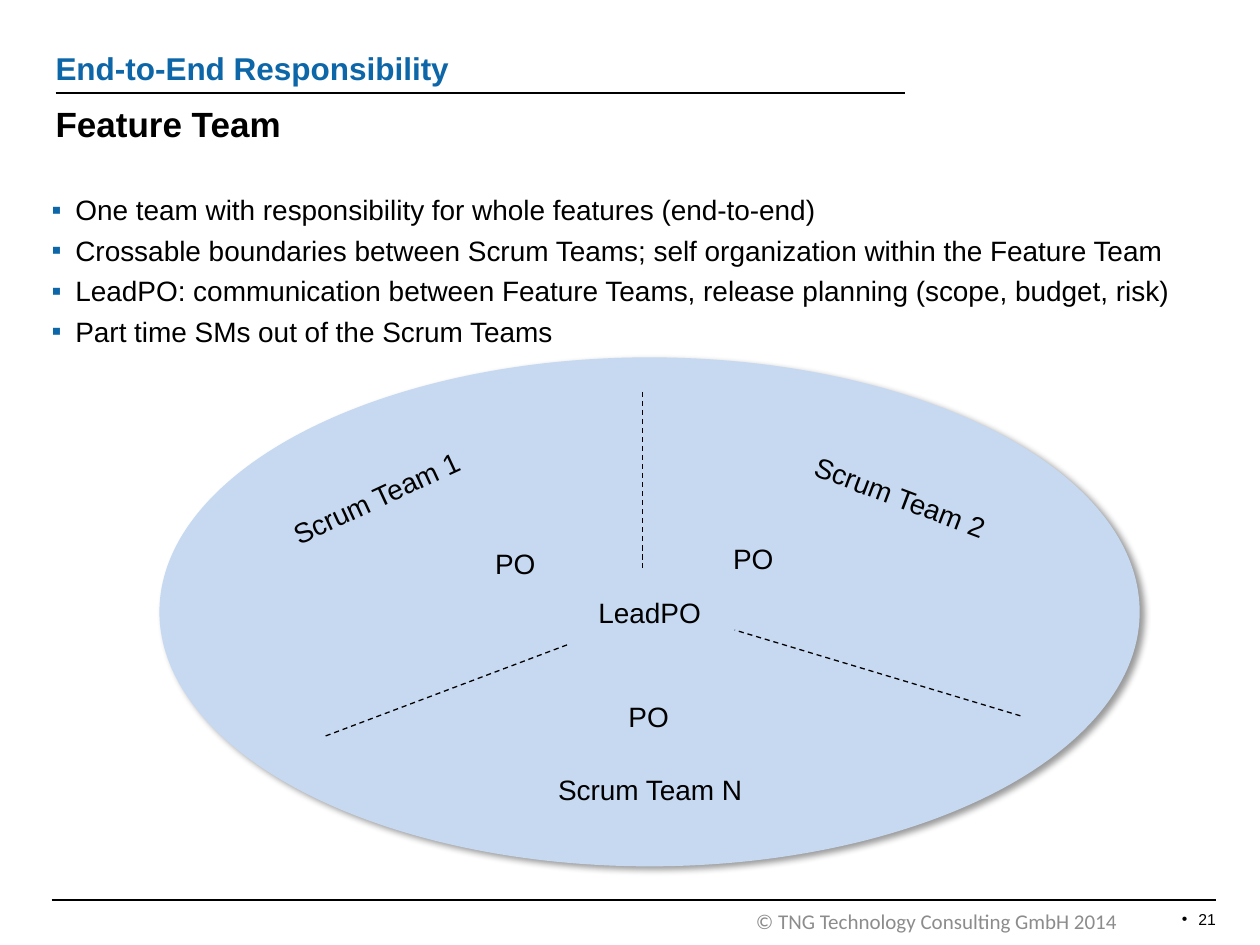
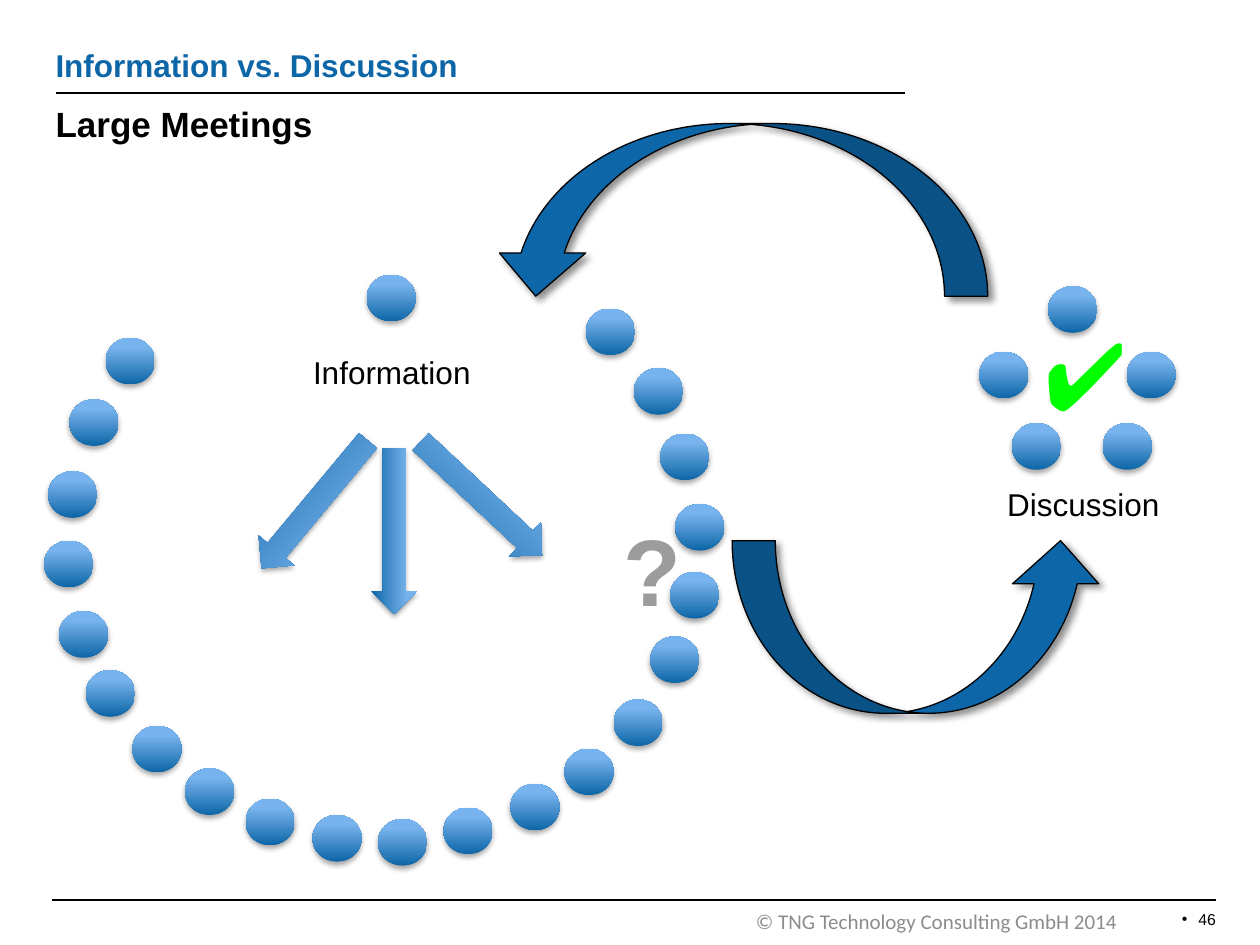
from dataclasses import dataclass
from typing import NamedTuple

from lxml import etree
from pptx import Presentation
from pptx.dml.color import RGBColor
from pptx.enum.dml import MSO_LINE
from pptx.enum.shapes import MSO_CONNECTOR, MSO_SHAPE
from pptx.enum.text import MSO_ANCHOR, PP_ALIGN
from pptx.oxml.ns import qn
from pptx.util import Cm, Pt

LEFT, CENTER, RIGHT = PP_ALIGN.LEFT, PP_ALIGN.CENTER, PP_ALIGN.RIGHT
TOP, MIDDLE, BOTTOM = MSO_ANCHOR.TOP, MSO_ANCHOR.MIDDLE, MSO_ANCHOR.BOTTOM
ELLIPSE, ARROW = MSO_SHAPE.OVAL, MSO_SHAPE.RIGHT_ARROW
CURVED_ARROW = MSO_SHAPE.CURVED_UP_ARROW
STRAIGHT, DASH = MSO_CONNECTOR.STRAIGHT, MSO_LINE.DASH


@dataclass(frozen=True)
class Theme:
    font: str = "Arial"
    footer_font: str = "Calibri"
    black: str = "000000"
    blue: str = "0D66A7"
    pale_blue: str = "C6D9F1"
    footer_grey: str = "8C8C8C"
    mark_grey: str = "9C9C9C"
    green: str = "00FF00"
    gradient: tuple = ((0, "0D66A7"), (80, "78B3ED"), (100, "76B4F1"))
    number_size: float = 9
    footer_size: float = 12
    body_size: float = 16
    topic_size: float = 18
    title_size: float = 20
    mark_size: float = 54


THEME = Theme()


class Box(NamedTuple):
    """Left, top, width and height in centimetres."""
    left: float
    top: float
    width: float
    height: float

    def lengths(self) -> list:
        return [Cm(value) for value in self]


class Line(NamedTuple):
    x1: float
    y1: float
    x2: float
    y2: float


class Style(NamedTuple):
    size: float = THEME.body_size
    color: str = THEME.black
    bold: bool = False
    font: str = THEME.font
    align: PP_ALIGN = LEFT


class Shadow(NamedTuple):
    """Opacity in percent, blur and distance in points, direction in degrees."""
    opacity: float
    blur: float
    distance: float
    direction: float


class Label(NamedTuple):
    text: str
    box: Box
    rotation: float = 0


DOT_SHADOW = Shadow(35, 3.1, 1.8, 90)
OVAL_SHADOW = Shadow(40, 4, 3, 45)
LOOP_SHADOW = Shadow(43, 4, 3, 45)

TITLE_RULE = Line(1.12, 1.88, 18.24, 1.88)
FOOTER_RULE = Line(1.04, 18.14, 24.51, 18.14)
COPYRIGHT = "© TNG Technology Consulting GmbH 2014"

FEATURE_POINTS = (
    "One team with responsibility for whole features (end-to-end)",
    "Crossable boundaries between Scrum Teams; self organization within the Feature Team",
    "LeadPO: communication between Feature Teams, release planning (scope, budget, risk)",
    "Part time SMs out of the Scrum Teams",
)
TEAM_BORDERS = (
    Line(12.95, 7.9, 12.95, 11.46),
    Line(11.43, 13, 6.5, 14.86),
    Line(20.57, 14.43, 14.81, 12.7),
)
TEAM_LABELS = (
    Label("PO", Box(9.73, 10.9, 1.35, 0.94)),
    Label("PO", Box(14.53, 10.8, 1.35, 0.94)),
    Label("PO", Box(12.42, 13.97, 1.35, 0.94)),
    Label("Scrum Team N", Box(11, 15.44, 4.47, 0.94)),
    Label("Scrum Team 2", Box(16.08, 9.58, 4.29, 0.94), 20.8),
    Label("Scrum Team 1", Box(5.51, 9.5, 4.4, 0.94), 335.1),
)

DOT_WIDTH, DOT_HEIGHT = 0.99, 0.94
SPEAKER = (7.39, 5.54)
AUDIENCE = (
    (11.81, 6.22), (12.78, 7.42), (13.31, 8.74), (13.61, 10.16), (13.51, 11.53),
    (13.11, 12.83), (12.37, 14.1), (11.38, 15.09), (10.29, 15.8), (8.94, 16.28),
    (7.62, 16.51), (6.3, 16.43), (4.95, 16.1), (3.73, 15.49), (2.67, 14.63),
    (1.73, 13.51), (1.19, 12.32), (0.89, 10.9), (0.97, 9.5), (1.4, 8.05),
    (2.13, 6.81),
)
SMALL_GROUP = ((21.13, 5.77), (22.71, 7.09), (22.23, 8.53), (20.4, 8.53), (19.74, 7.09))
INFORMATION_FLOWS = ((6.27, 10.24, 90), (8.03, 9.58, 43.1), (4.67, 9.7, 129.8))
MEETING_LABELS = (
    Label("Information", Box(4.93, 6.55, 5.94, 2.97)),
    Label("Discussion", Box(18.87, 9.22, 5.94, 2.97)),
)
LOOPS = ((Box(14.76, 10.9, 7.49, 3.48), 0), (Box(9.93, 2.49, 9.98, 3.48), 180))


def rgb(color: str) -> RGBColor:
    return RGBColor.from_string(color)


def add_run(paragraph, text: str, style: Style) -> None:
    paragraph.alignment = style.align
    run = paragraph.add_run()
    run.text = text
    font = run.font
    font.name, font.size, font.bold = style.font, Pt(style.size), style.bold
    font.color.rgb = rgb(style.color)


def add_bullet(paragraph, mark: str, color: str, indent: float) -> None:
    properties = paragraph._p.get_or_add_pPr()
    properties.set("marL", str(Cm(indent)))
    properties.set("indent", str(-Cm(indent)))
    bullet_color = etree.SubElement(properties, qn("a:buClr"))
    etree.SubElement(bullet_color, qn("a:srgbClr"), val=color)
    etree.SubElement(properties, qn("a:buFont"), typeface=THEME.font)
    etree.SubElement(properties, qn("a:buChar"), char=mark)


def add_text(slide, box: Box, text: str, style: Style, inset: bool = True,
             anchor: MSO_ANCHOR = TOP, rotation: float = 0, wrap: bool = True):
    """Add a text box with its first paragraph and return its text frame."""
    holder = slide.shapes.add_textbox(*box.lengths())
    holder.rotation = rotation
    frame = holder.text_frame
    frame.word_wrap = wrap
    frame.vertical_anchor = anchor
    if not inset:
        frame.margin_left = frame.margin_right = 0
        frame.margin_top = frame.margin_bottom = 0
    if text:
        add_run(frame.paragraphs[0], text, style)
    return frame


def add_line(slide, line: Line, width: float, dash: MSO_LINE | None = None) -> None:
    connector = slide.shapes.add_connector(STRAIGHT, *[Cm(value) for value in line])
    connector.line.color.rgb = rgb(THEME.black)
    connector.line.width = Pt(width)
    if dash:
        connector.line.dash_style = dash
    etree.SubElement(connector._element.spPr, qn("a:effectLst"))


def add_plain_shape(slide, kind: MSO_SHAPE, box: Box, rotation: float = 0):
    """Add a shape with no fill, line or shadow."""
    shape = slide.shapes.add_shape(kind, *box.lengths())
    shape.rotation = rotation
    shape.shadow.inherit = False
    shape.fill.background()
    shape.line.fill.background()
    return shape


def add_shadow(shape, shadow: Shadow) -> None:
    effects = shape._element.spPr.find(qn("a:effectLst"))
    outer = etree.SubElement(
        effects, qn("a:outerShdw"), blurRad=str(Pt(shadow.blur)),
        dist=str(Pt(shadow.distance)), dir=str(shadow.direction * 60000), rotWithShape="0")
    color = etree.SubElement(outer, qn("a:srgbClr"), val=THEME.black)
    etree.SubElement(color, qn("a:alpha"), val=str(shadow.opacity * 1000))


def add_solid_shape(slide, kind: MSO_SHAPE, box: Box, fill: str, line: str,
                    width: float, shadow: Shadow, rotation: float = 0):
    shape = add_plain_shape(slide, kind, box, rotation)
    shape.fill.solid()
    shape.fill.fore_color.rgb = rgb(fill)
    shape.line.color.rgb = rgb(line)
    shape.line.width = Pt(width)
    add_shadow(shape, shadow)
    return shape


def add_gradient_shape(slide, kind: MSO_SHAPE, box: Box, rotation: float = 0) -> None:
    shape = add_plain_shape(slide, kind, box, rotation)
    shape.fill.gradient()
    shape.fill.gradient_angle = 90
    stops = shape._element.spPr.find(qn("a:gradFill")).find(qn("a:gsLst"))
    for stop in list(stops):
        stops.remove(stop)
    for position, color in THEME.gradient:
        stop = etree.SubElement(stops, qn("a:gs"), pos=str(position * 1000))
        etree.SubElement(stop, qn("a:srgbClr"), val=color)
    add_shadow(shape, DOT_SHADOW)


def add_frame(presentation, title: str, topic: str, topic_top: float, number: int):
    """Add a blank slide with its rules, headings, copyright and page number."""
    slide = presentation.slides.add_slide(presentation.slide_layouts[6])
    for rule in (FOOTER_RULE, TITLE_RULE):
        add_line(slide, rule, 1)
    add_text(slide, Box(15.24, 18.31, 8.28, 0.51), COPYRIGHT,
             Style(THEME.footer_size, THEME.footer_grey, font=THEME.footer_font), inset=False)
    page = add_text(slide, Box(23.57, 18.21, 1.19, 0.64), "", Style()).paragraphs[0]
    add_bullet(page, "•", THEME.black, 0.33)
    add_run(page, str(number), Style(THEME.number_size, align=RIGHT))
    add_text(slide, Box(1.12, 2.06, 17.2, 0.86), title,
             Style(THEME.title_size, bold=True), inset=False)
    add_text(slide, Box(1.12, topic_top, 17.1, 0.76), topic,
             Style(THEME.topic_size, THEME.blue, bold=True), inset=False, anchor=BOTTOM)
    return slide


def build_feature_team(presentation) -> None:
    slide = add_frame(presentation, "Feature Team", "End-to-End Responsibility", 0.99, 21)
    points = add_text(slide, Box(1.04, 3.89, 23.44, 3.15), "", Style(), inset=False)
    for index, point in enumerate(FEATURE_POINTS):
        paragraph = points.add_paragraph() if index else points.paragraphs[0]
        add_bullet(paragraph, "▪", THEME.blue, 0.48)
        if index:
            paragraph.space_before = Pt(3.9)
        add_run(paragraph, point, Style())

    team = add_solid_shape(slide, ELLIPSE, Box(3.25, 7.24, 19.69, 10.19),
                           THEME.pale_blue, THEME.pale_blue, 2, OVAL_SHADOW)
    team.text_frame.vertical_anchor = MIDDLE
    add_run(team.text_frame.paragraphs[0], "LeadPO", Style(align=CENTER))
    for border in TEAM_BORDERS:
        add_line(slide, border, 0.75, DASH)
    for label in TEAM_LABELS:
        add_text(slide, label.box, label.text, Style(), rotation=label.rotation)


def build_large_meetings(presentation) -> None:
    slide = add_frame(presentation, "Large Meetings", "Information vs. Discussion", 0.94, 46)
    for left, top in (SPEAKER, *AUDIENCE, *SMALL_GROUP):
        add_gradient_shape(slide, ELLIPSE, Box(left, top, DOT_WIDTH, DOT_HEIGHT))
    for left, top, rotation in INFORMATION_FLOWS:
        add_gradient_shape(slide, ARROW, Box(left, top, 3.35, 0.94), rotation)
    for label in MEETING_LABELS:
        caption = add_plain_shape(slide, ELLIPSE, label.box).text_frame
        caption.vertical_anchor = TOP
        add_run(caption.paragraphs[0], label.text, Style(THEME.topic_size, align=CENTER))
    add_text(slide, Box(12.32, 10.19, 1.68, 2.57), "?",
             Style(THEME.mark_size, THEME.mark_grey, bold=True, align=CENTER), wrap=False)
    for box, rotation in LOOPS:
        add_solid_shape(slide, CURVED_ARROW, box, THEME.blue, THEME.black, 0.75,
                        LOOP_SHADOW, rotation)
    add_text(slide, Box(20.8, 6.25, 2.03, 2.57), "✔", Style(THEME.mark_size, THEME.green))


def main() -> None:
    presentation = Presentation()
    presentation.slide_width, presentation.slide_height = Cm(25.4), Cm(19.05)
    build_feature_team(presentation)
    build_large_meetings(presentation)
    presentation.save("out.pptx")


if __name__ == "__main__":
    main()
